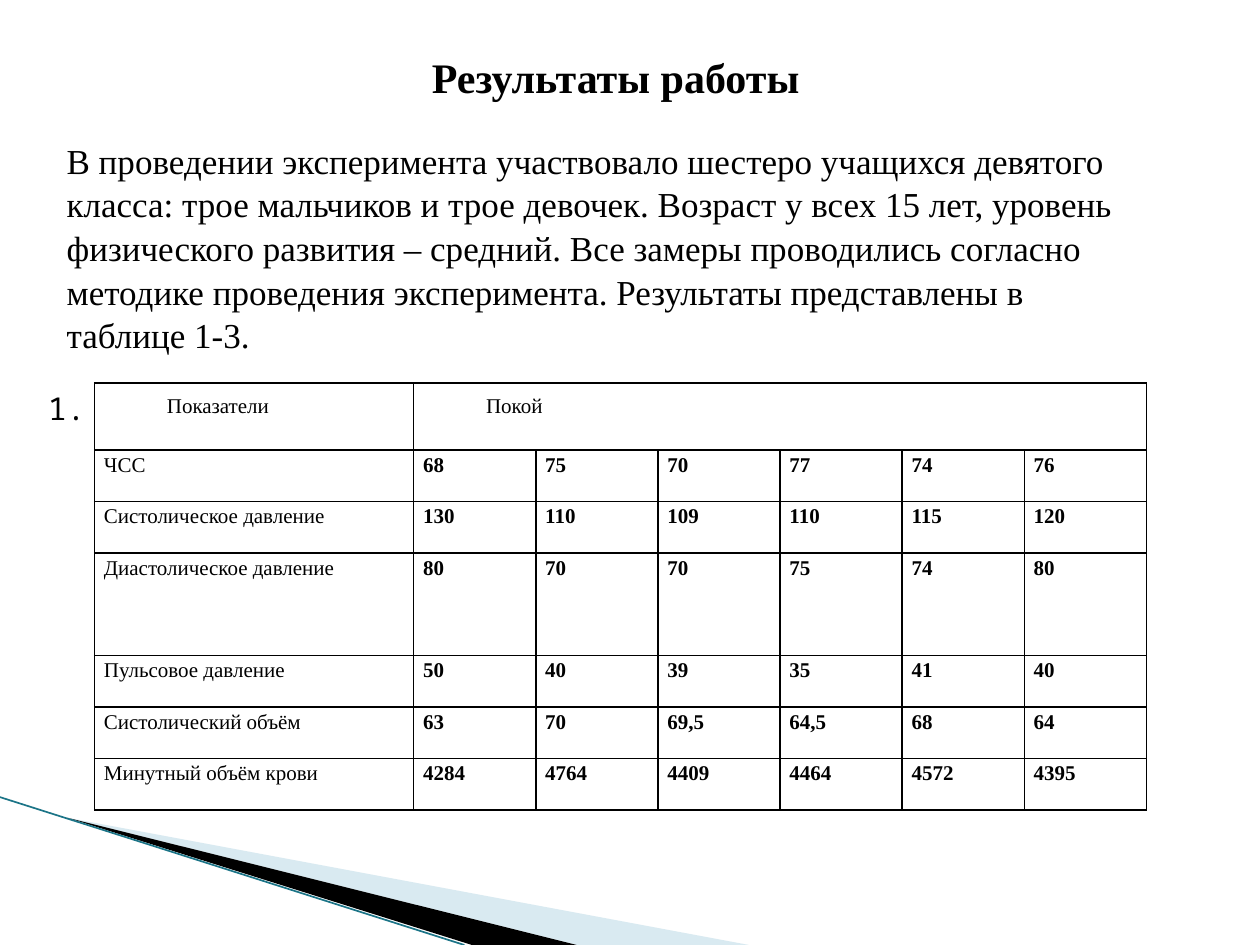
import dataclasses

import lxml.etree
import pptx
import pptx.dml.color
import pptx.enum.shapes
import pptx.enum.text
import pptx.oxml
import pptx.oxml.ns
import pptx.util

Pt = pptx.util.Pt
RGBColor = pptx.dml.color.RGBColor
PP_ALIGN = pptx.enum.text.PP_ALIGN
MSO_ANCHOR = pptx.enum.text.MSO_ANCHOR
qn = pptx.oxml.ns.qn


@dataclasses.dataclass(frozen=True)
class Theme:
    ink: RGBColor = RGBColor(0x00, 0x00, 0x00)
    pale: RGBColor = RGBColor(0xA0, 0xCB, 0xDC)
    edge: RGBColor = RGBColor(0x1B, 0x74, 0x87)
    pale_opacity: int = 40
    font: str = "Times New Roman"
    number_font: str = "Noto Sans Mono"
    title_size: int = 24
    body_size: int = 20
    number_size: int = 18
    table_size: int = 12


THEME = Theme()

TITLE = "Результаты работы"
INTRODUCTION = (
    "В проведении эксперимента участвовало шестеро учащихся девятого класса: "
    "трое мальчиков и трое девочек. Возраст у всех 15 лет, уровень физического "
    "развития – средний. Все замеры проводились согласно методике проведения "
    "эксперимента. Результаты представлены в таблице 1-3."
)
HEADERS = ("Показатели", "Покой")
MEASUREMENTS = [
    ("ЧСС", "68", "75", "70", "77", "74", "76"),
    ("Систолическое давление", "130", "110", "109", "110", "115", "120"),
    ("Диастолическое давление", "80", "70", "70", "75", "74", "80"),
    ("Пульсовое давление", "50", "40", "39", "35", "41", "40"),
    ("Систолический объём", "63", "70", "69,5", "64,5", "68", "64"),
    ("Минутный объём крови", "4284", "4764", "4409", "4464", "4572", "4395"),
]
LABEL_WIDTH = 182.4
HEADER_HEIGHT = 38.4
ROW_UNITS = (1, 1, 2, 1, 1, 1)


def style_paragraph(paragraph, size, name=THEME.font, bold=False):
    paragraph.font.size = Pt(size)
    paragraph.font.name = name
    paragraph.font.bold = bold
    paragraph.font.color.rgb = THEME.ink


def place(shape, box):
    shape.left, shape.top, shape.width, shape.height = (Pt(length) for length in box)


def add_wedge(slide, box, corners, color):
    left, top, width, height = box
    points = [(Pt(left + x * width), Pt(top + y * height)) for x, y in corners]
    builder = slide.shapes.build_freeform(*points[0], scale=1.0)
    builder.add_line_segments(points[1:], close=True)
    wedge = builder.convert_to_shape()
    wedge.shadow.inherit = False
    wedge.fill.solid()
    wedge.fill.fore_color.rgb = color
    wedge.line.fill.background()
    return wedge


def add_corner_decoration(slide, box):
    left, top, width, height = box
    pale = add_wedge(slide, box, [(0.09, 0.14), (1, 1), (0.77, 1)], THEME.pale)
    color = pale.fill._xPr.find(".//" + qn("a:srgbClr"))
    alpha = lxml.etree.SubElement(color, qn("a:alpha"))
    alpha.set("val", str(THEME.pale_opacity * 1000))
    add_wedge(slide, box, [(0.09, 0.14), (0.77, 1), (0.63, 1)], THEME.ink)
    edge = slide.shapes.add_connector(
        pptx.enum.shapes.MSO_CONNECTOR.STRAIGHT,
        Pt(left), Pt(top), Pt(left + 0.62 * width), Pt(top + height),
    )
    edge.line.color.rgb = THEME.edge
    edge.line.width = Pt(0.95)
    lxml.etree.SubElement(edge._element.spPr, qn("a:effectLst"))


def format_title(slide, box):
    title = slide.shapes.title
    place(title, box)
    frame = title.text_frame
    frame.text = TITLE
    frame.word_wrap = True
    frame.auto_size = pptx.enum.text.MSO_AUTO_SIZE.NONE
    frame.vertical_anchor = MSO_ANCHOR.TOP
    paragraph = frame.paragraphs[0]
    paragraph.alignment = PP_ALIGN.CENTER
    style_paragraph(paragraph, THEME.title_size, bold=True)


def add_text(slide, box, text, size, name=THEME.font, anchor=MSO_ANCHOR.TOP):
    frame = slide.shapes.add_textbox(*(Pt(length) for length in box)).text_frame
    frame.word_wrap = True
    frame.vertical_anchor = anchor
    frame.text = text
    style_paragraph(frame.paragraphs[0], size, name)
    return frame.paragraphs[0]


def draw_borders(cell):
    properties = cell._tc.get_or_add_tcPr()
    for index, side in enumerate(("lnL", "lnR", "lnT", "lnB")):
        border = pptx.oxml.parse_xml(
            f'<a:{side} xmlns:a="http://schemas.openxmlformats.org/drawingml/2006/main" '
            f'w="{Pt(1)}"><a:solidFill><a:srgbClr val="{THEME.ink}"/></a:solidFill></a:{side}>'
        )
        properties.insert(index, border)


def fill_cell(cell, text, line_spacing, bold=False, indent=0):
    cell.text = text
    paragraph = cell.text_frame.paragraphs[0]
    paragraph.line_spacing = line_spacing
    if indent:
        paragraph._p.get_or_add_pPr().set("indent", str(Pt(indent)))
    style_paragraph(paragraph, THEME.table_size, bold=bold)


def add_measurement_table(slide, box):
    left, top, width, height = box
    row_count, column_count = len(MEASUREMENTS) + 1, len(MEASUREMENTS[0])
    table = slide.shapes.add_table(
        row_count, column_count, Pt(left), Pt(top), Pt(width), Pt(height)
    ).table
    value_width = (width - LABEL_WIDTH) / (column_count - 1)
    for index, column in enumerate(table.columns):
        column.width = Pt(value_width if index else LABEL_WIDTH)
    unit = (height - HEADER_HEIGHT) / sum(ROW_UNITS)
    for index, row in enumerate(table.rows):
        row.height = Pt(ROW_UNITS[index - 1] * unit if index else HEADER_HEIGHT)
    for cell in table.iter_cells():
        cell.margin_left = cell.margin_right = Pt(5.4)
        cell.margin_top = cell.margin_bottom = Pt(0)
        cell.fill.background()
        draw_borders(cell)
    table.cell(0, 1).merge(table.cell(0, column_count - 1))
    for index, text in enumerate(HEADERS):
        fill_cell(table.cell(0, index), text, 1.5, indent=36)
    for row, values in enumerate(MEASUREMENTS, start=1):
        for column, text in enumerate(values):
            fill_cell(table.cell(row, column), text, 1.15, bold=column > 0)


def build_results_slide(presentation):
    slide = presentation.slides.add_slide(presentation.slide_layouts[5])
    format_title(slide, (139, 26, 425.5, 36))
    add_corner_decoration(slide, (0, 455.5, 428, 84.5))
    introduction = add_text(
        slide, (31, 77, 629, 128), INTRODUCTION, THEME.body_size, anchor=MSO_ANCHOR.MIDDLE
    )
    introduction.line_spacing = 1.04
    add_measurement_table(slide, (54, 218.8, 601.2, 244))
    add_text(slide, (20.2, 218.8, 54, 28.8), "1.", THEME.number_size, THEME.number_font)


def main():
    presentation = pptx.Presentation()
    presentation.slide_width = Pt(720)
    presentation.slide_height = Pt(540)
    build_results_slide(presentation)
    presentation.save("out.pptx")


if __name__ == "__main__":
    main()
